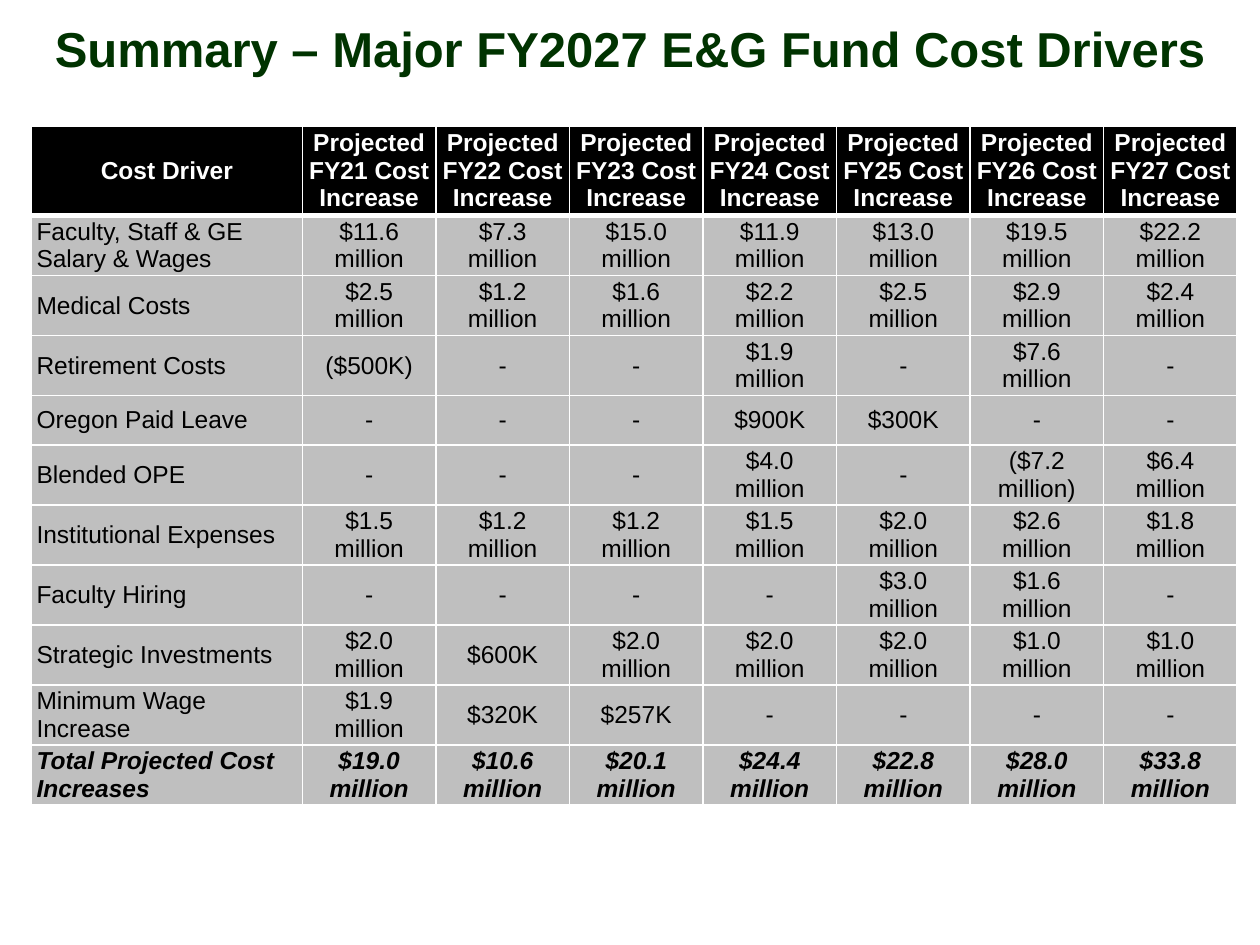
from typing import Any, NamedTuple

from lxml.etree import SubElement
from pptx import Presentation
from pptx.dml.color import RGBColor
from pptx.enum.text import MSO_ANCHOR, PP_ALIGN
from pptx.oxml.ns import qn
from pptx.util import Inches, Pt


class Style(NamedTuple):
    fill: str
    color: str
    bold: bool
    italic: bool
    top: float
    base: float


class Driver(NamedTuple):
    label: str
    costs: str


HEAD = Style("000000", "FFFFFF", True, False, 1, 3)
FIRST = Style("BFBFBF", "000000", False, False, 3, 1)
BODY = FIRST._replace(top=1)
TOTAL = BODY._replace(bold=True, italic=True)

WIDTHS = [2.15] + [1.06] * 7
HEIGHTS = [0.71] + [0.39] * 10
DRIVERS = [
    Driver("Faculty, Staff & GE Salary & Wages",
           "$11.6 million|$7.3 million|$15.0 million|$11.9 million|$13.0 million|$19.5 million|$22.2 million"),
    Driver("Medical Costs",
           "$2.5 million|$1.2 million|$1.6 million|$2.2 million|$2.5 million|$2.9 million|$2.4 million"),
    Driver("Retirement Costs", "($500K)|-|-|$1.9 million|-|$7.6 million|-"),
    Driver("Oregon Paid Leave", "-|-|-|$900K|$300K|-|-"),
    Driver("Blended OPE", "-|-|-|$4.0 million|-|($7.2 million)|$6.4 million"),
    Driver("Institutional Expenses",
           "$1.5 million|$1.2 million|$1.2 million|$1.5 million|$2.0 million|$2.6 million|$1.8 million"),
    Driver("Faculty Hiring", "-|-|-|-|$3.0 million|$1.6 million|-"),
    Driver("Strategic Investments",
           "$2.0 million|$600K|$2.0 million|$2.0 million|$2.0 million|$1.0 million|$1.0 million"),
    Driver("Minimum Wage Increase", "$1.9 million|$320K|$257K|-|-|-|-"),
    Driver("Total Projected Cost Increases",
           "$19.0 million|$10.6 million|$20.1 million|$24.4 million|$22.8 million|$28.0 million|$33.8 million"),
]
ROWS = [["Cost Driver"] + [f"Projected FY{year} Cost Increase" for year in range(21, 28)]]
ROWS += [[driver.label] + driver.costs.split("|") for driver in DRIVERS]
STYLES = [HEAD, FIRST] + [BODY] * 8 + [TOTAL]


def paint(target: Any, color: str) -> None:
    target.rgb = RGBColor.from_string(color)


def assign(target: Any, values: dict[str, Any]) -> None:
    for name, value in values.items():
        setattr(target, name, value)


def margins(side: float, end: float) -> dict[str, Any]:
    return {"margin_left": Inches(side), "margin_right": Inches(side),
            "margin_top": Inches(end), "margin_bottom": Inches(end),
            "vertical_anchor": MSO_ANCHOR.MIDDLE}


def write(frame: Any, text: str, size: float, color: str, bold: bool,
          italic: bool = False, align: PP_ALIGN = PP_ALIGN.CENTER) -> None:
    line = frame.paragraphs[0]
    line.alignment = align
    run = line.add_run()
    run.text = text
    assign(run.font, {"name": "Arial", "size": Pt(size), "bold": bold, "italic": italic})
    paint(run.font.color, color)


def border(cell: Any, style: Style) -> None:
    props = cell._tc.get_or_add_tcPr()
    for tag, width in (("lnL", 1), ("lnR", 1), ("lnT", style.top), ("lnB", style.base)):
        edge = SubElement(props, qn(f"a:{tag}"), w=str(Pt(width)))
        fill = SubElement(edge, qn("a:solidFill"))
        SubElement(fill, qn("a:srgbClr"), val="FFFFFF")


def draw_cell(cell: Any, text: str, style: Style, align: PP_ALIGN) -> None:
    assign(cell, margins(0.04, 0.02))
    border(cell, style)
    cell.fill.solid()
    paint(cell.fill.fore_color, style.fill)
    write(cell.text_frame, text, 14, style.color, style.bold, style.italic, align)


def draw_table(slide: Any) -> None:
    table = slide.shapes.add_table(
        len(ROWS), len(WIDTHS), Inches(0.25), Inches(1),
        Inches(sum(WIDTHS)), Inches(sum(HEIGHTS))).table
    for col, width in zip(table.columns, WIDTHS):
        col.width = Inches(width)
    for row, height, texts, style in zip(table.rows, HEIGHTS, ROWS, STYLES):
        row.height = Inches(height)
        for col, (cell, text) in enumerate(zip(row.cells, texts)):
            label = col == 0 and style is not HEAD
            draw_cell(cell, text, style, PP_ALIGN.LEFT if label else PP_ALIGN.CENTER)


def draw_title(slide: Any) -> None:
    frame = slide.shapes.add_textbox(
        Inches(0.22), Inches(0.04), Inches(9.56), Inches(0.68)).text_frame
    assign(frame, {"word_wrap": True, **margins(0.07, 0.04)})
    write(frame, "Summary – Major FY2027 E&G Fund Cost Drivers", 28, "003300", True)


def main() -> None:
    deck = Presentation()
    assign(deck, {"slide_width": Inches(10), "slide_height": Inches(7.5)})
    slide = deck.slides.add_slide(deck.slide_layouts[6])
    draw_table(slide)
    draw_title(slide)
    deck.save("out.pptx")


if __name__ == "__main__":
    main()
